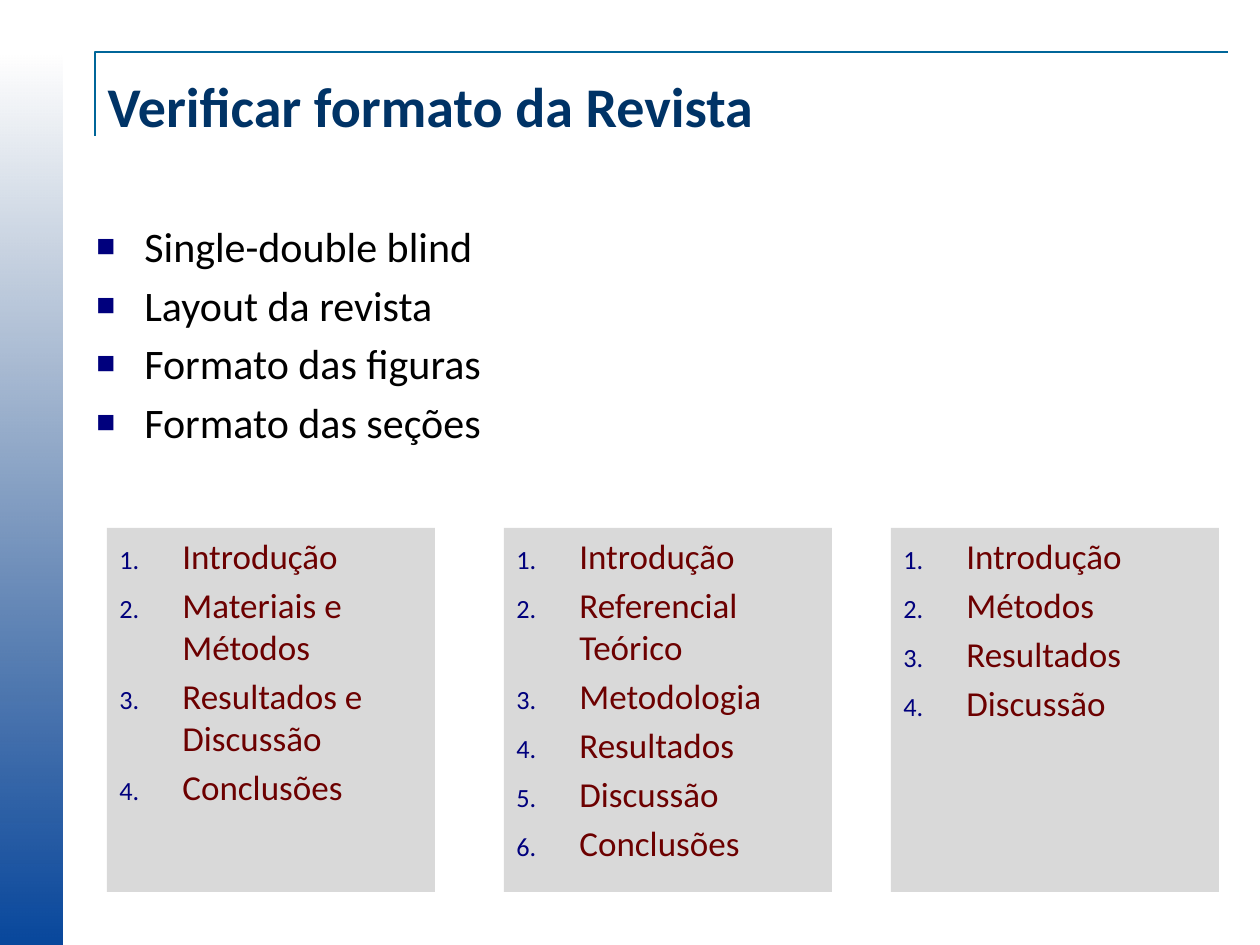
from lxml import etree
from pptx import Presentation, util as u
from pptx.dml.color import RGBColor
from pptx.enum import shapes, text
from pptx.oxml.ns import qn

SCALE = 914400 / 126
COLORS = {
    "bar_bottom": "08479C", "bar_top": "063370", "rule": "006699",
    "title": "003366", "panel": "D9D9D9", "section": "6C0000",
    "bullet": "00007D", "body": "000000",
}


def px(*lengths):
    return [u.Emu(round(length * SCALE)) for length in lengths]


def write(frame, lines, size, color, bold=False, indent=0, bullet=None,
          gap=0, anchor=text.MSO_ANCHOR.TOP):
    frame.word_wrap = True
    frame.auto_size = text.MSO_AUTO_SIZE.NONE
    frame.vertical_anchor = anchor
    for index, line in enumerate(lines):
        para = frame.paragraphs[0] if index == 0 else frame.add_paragraph()
        para.alignment = text.PP_ALIGN.LEFT
        if index:
            para.space_before = u.Pt(gap)
        if bullet:
            props = para._p.get_or_add_pPr()
            props.set("marL", str(px(indent)[0]))
            props.set("indent", str(px(-indent)[0]))
            tint = etree.SubElement(props, qn("a:buClr"))
            etree.SubElement(tint, qn("a:srgbClr"), val=COLORS["bullet"])
            etree.SubElement(props, qn("a:buSzPct"), val="75000")
            if bullet == "number":
                etree.SubElement(props, qn("a:buFont"), typeface="Calibri")
                etree.SubElement(props, qn("a:buAutoNum"), type="arabicPeriod")
            else:
                etree.SubElement(props, qn("a:buFont"), typeface="Arial")
                etree.SubElement(props, qn("a:buChar"), char=bullet)
        span = para.add_run()
        span.text = line
        span.font.name = "Calibri"
        span.font.size = u.Pt(size)
        span.font.bold = bold
        span.font.color.rgb = RGBColor.from_string(COLORS[color])


deck = Presentation()
deck.slide_width, deck.slide_height = px(1260, 945)
page = deck.slides.add_slide(deck.slide_layouts[5])

bar = page.shapes.add_shape(shapes.MSO_SHAPE.RECTANGLE, *px(0, 53, 63, 892))
bar.shadow.inherit = False
bar.line.fill.background()
bar.fill.gradient()
bar.fill.gradient_angle = 90
for stop, name in zip(bar.fill.gradient_stops, ("bar_bottom", "bar_top")):
    stop.color.rgb = RGBColor.from_string(COLORS[name])
top_color = list(bar._element.spPr.iter(qn("a:srgbClr")))[-1]
etree.SubElement(top_color, qn("a:alpha"), val="0")

outline = page.shapes.build_freeform(95, 136, scale=SCALE)
outline.add_line_segments([(95, 52), (1228, 52)], close=False)
rule = outline.convert_to_shape()
rule.shadow.inherit = False
rule.fill.background()
rule.line.color.rgb = RGBColor.from_string(COLORS["rule"])
rule.line.width = u.Pt(1.5)

title = page.shapes.title
title.left, title.top, title.width, title.height = px(95, 53, 1124, 105)
write(title.text_frame, ["Verificar formato da Revista"], size=32,
      color="title", bold=True, anchor=text.MSO_ANCHOR.MIDDLE)

checks = page.shapes.add_textbox(*px(84, 214, 1124, 284))
write(checks.text_frame,
      ["Single-double blind", "Layout da revista",
       "Formato das figuras", "Formato das seções"],
      size=24, color="body", indent=48, bullet="■", gap=4.8)

panels = {
    107: ["Introdução", "Materiais e Métodos", "Resultados e Discussão",
          "Conclusões"],
    504: ["Introdução", "Referencial Teórico", "Metodologia", "Resultados",
          "Discussão", "Conclusões"],
    891: ["Introdução", "Métodos", "Resultados", "Discussão"],
}
for left, sections in panels.items():
    box = page.shapes.add_shape(
        shapes.MSO_SHAPE.RECTANGLE, *px(left, 528, 328, 364))
    box.shadow.inherit = False
    box.fill.solid()
    box.fill.fore_color.rgb = RGBColor.from_string(COLORS["panel"])
    box.line.fill.background()
    write(box.text_frame, sections, size=20, color="section", indent=63,
          bullet="number", gap=4)

deck.save("out.pptx")
